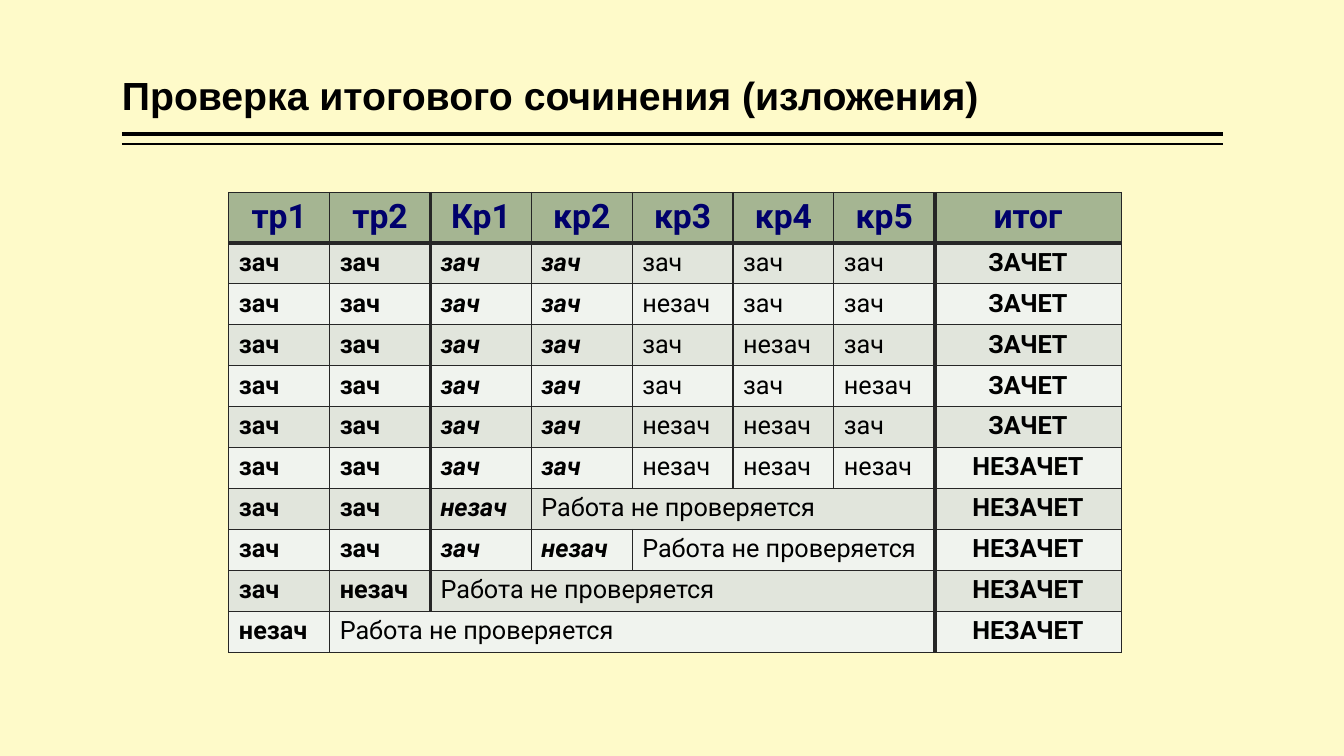
from lxml import etree
from pptx import Presentation
from pptx.dml.color import RGBColor
from pptx.enum.shapes import MSO_CONNECTOR
from pptx.enum.text import MSO_ANCHOR, PP_ALIGN
from pptx.oxml.ns import qn
from pptx.util import Inches, Pt

STRAIGHT = MSO_CONNECTOR.STRAIGHT
BOTTOM = MSO_ANCHOR.BOTTOM
CENTER = PP_ALIGN.CENTER

BLACK, NAVY, GRID = "000000", "00006C", "262626"
HEADER_FILL, BAND_FILLS = "A5B592", ("E1E5DC", "F0F3EE")
UNCHECKED = "Работа не проверяется"
HEADERS = ["тр1", "тр2", "Кр1", "кр2", "кр3", "кр4", "кр5", "итог"]
# Marks per row; a short row is filled up to the result by UNCHECKED
RESULTS = [
    ("зач зач зач зач зач зач зач", "ЗАЧЕТ"),
    ("зач зач зач зач незач зач зач", "ЗАЧЕТ"),
    ("зач зач зач зач зач незач зач", "ЗАЧЕТ"),
    ("зач зач зач зач зач зач незач", "ЗАЧЕТ"),
    ("зач зач зач зач незач незач зач", "ЗАЧЕТ"),
    ("зач зач зач зач незач незач незач", "НЕЗАЧЕТ"),
    ("зач зач незач", "НЕЗАЧЕТ"),
    ("зач зач зач незач", "НЕЗАЧЕТ"),
    ("зач незач", "НЕЗАЧЕТ"),
    ("незач", "НЕЗАЧЕТ"),
]
RESULT_COL = len(HEADERS) - 1
THICK_EDGES = (2, RESULT_COL)


def rgb(color):
    return RGBColor.from_string(color)


def set_borders(cell, widths):
    """Draw the cell's borders; widths are points for left, right, top, bottom."""
    tcPr = cell._tc.get_or_add_tcPr()
    for side, width in zip("LRTB", widths):
        ln = etree.SubElement(tcPr, qn("a:ln" + side), w=str(Pt(width)))
        fill = etree.SubElement(ln, qn("a:solidFill"))
        etree.SubElement(fill, qn("a:srgbClr"), val=GRID)


prs = Presentation()
prs.slide_width, prs.slide_height = Inches(13.33), Inches(7.5)
s = prs.slides.add_slide(prs.slide_layouts[6])
s.background.fill.solid()
s.background.fill.fore_color.rgb = rgb("FEFAC9")

# Double rule under the title
for y, width in ((1.33, 3), (1.43, 1)):
    rule = s.shapes.add_connector(STRAIGHT, Inches(1.21), Inches(y), Inches(12.13), Inches(y))
    rule.line.color.rgb = rgb(BLACK)
    rule.line.width = Pt(width)
    etree.SubElement(rule._element.spPr, qn("a:effectLst"))

# Title
tf = s.shapes.add_textbox(Inches(1.21), Inches(0.08), Inches(10.92), Inches(1.15)).text_frame
tf.word_wrap = True
tf.vertical_anchor = BOTTOM
tf.margin_left = tf.margin_right = 0
p = tf.paragraphs[0]
p.line_spacing = 0.9
r = p.add_run()
r.text = "Проверка итогового сочинения (изложения)"
r.font.name, r.font.size, r.font.bold = "Arial", Pt(28), True
r.font.color.rgb = rgb(BLACK)

# Table of marks
table = s.shapes.add_table(len(RESULTS) + 1, len(HEADERS), Inches(2.27), Inches(1.91),
                           Inches(8.85), Inches(4.56)).table
table.first_row = table.horz_banding = False
for col in table.columns:
    col.width = Inches(1)
table.columns[RESULT_COL].width = Inches(1.85)
for row in table.rows:
    row.height = Inches(4.06) // len(RESULTS)
table.rows[0].height = Inches(0.5)

rows = [HEADERS]
for marks, result in RESULTS:
    marks = marks.split()
    if len(marks) < RESULT_COL:
        marks.append(UNCHECKED)
    rows.append(marks + [result])

for i, texts in enumerate(rows):
    header = i == 0
    for j, text in enumerate(texts):
        result = j == len(texts) - 1
        left = RESULT_COL if result else j
        right = RESULT_COL if text == UNCHECKED else left + 1
        cell = table.cell(i, left)
        if right - left > 1:
            cell.merge(table.cell(i, right - 1))
        set_borders(cell, (3 if left in THICK_EDGES else 1,
                           3 if right in THICK_EDGES else 1,
                           3 if i == 1 else 1,
                           3 if header else 1))
        cell.fill.solid()
        cell.fill.fore_color.rgb = rgb(HEADER_FILL if header else BAND_FILLS[(i - 1) % 2])
        p = cell.text_frame.paragraphs[0]
        if header or result:
            p.alignment = CENTER
        r = p.add_run()
        r.text = text
        r.font.name = "Roboto"
        r.font.size = Pt(24 if header else 18)
        r.font.color.rgb = rgb(NAVY if header else BLACK)
        r.font.bold = header or result or (left < 4 and text != UNCHECKED)
        r.font.italic = not header and left in (2, 3) and text != UNCHECKED

prs.save("out.pptx")
